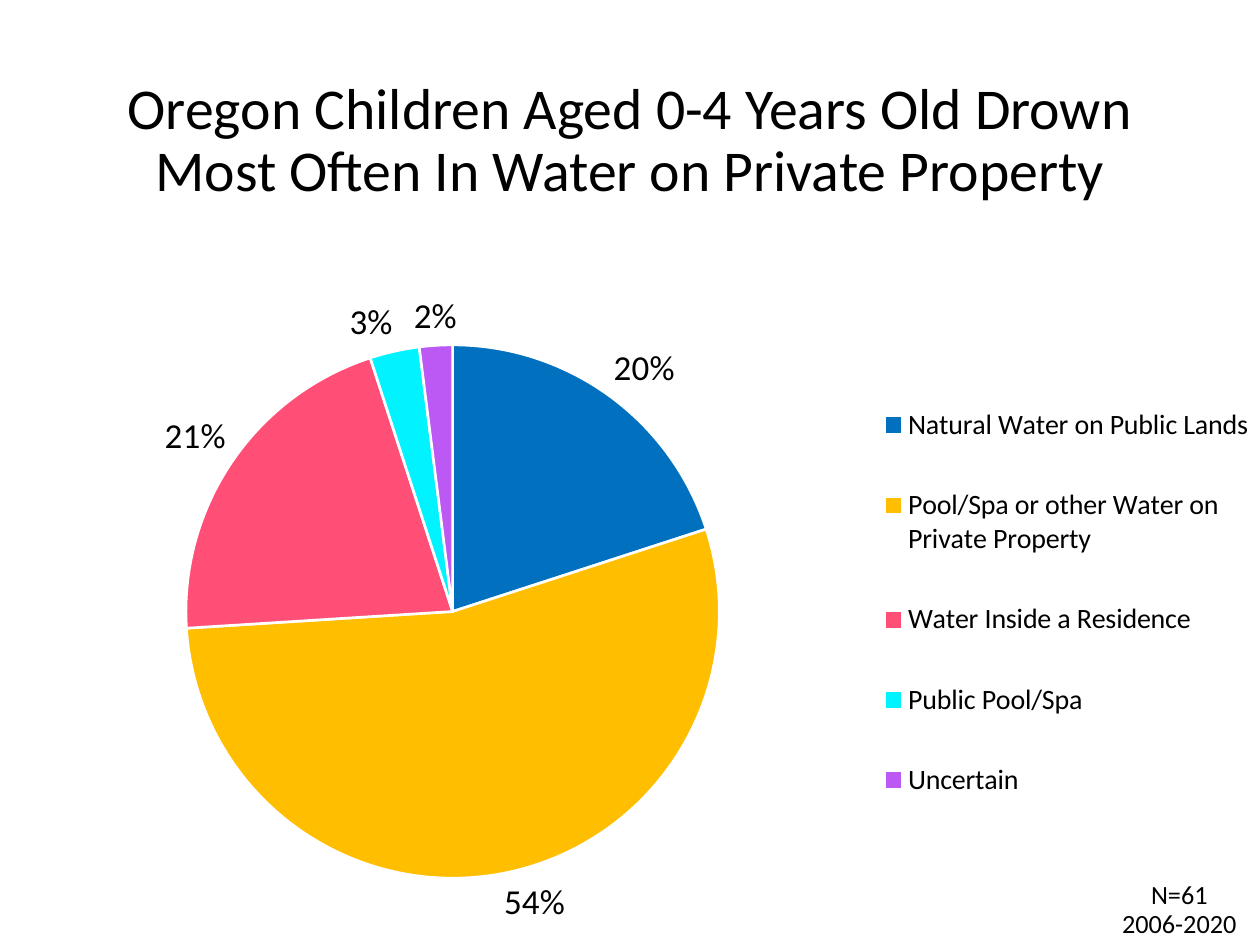
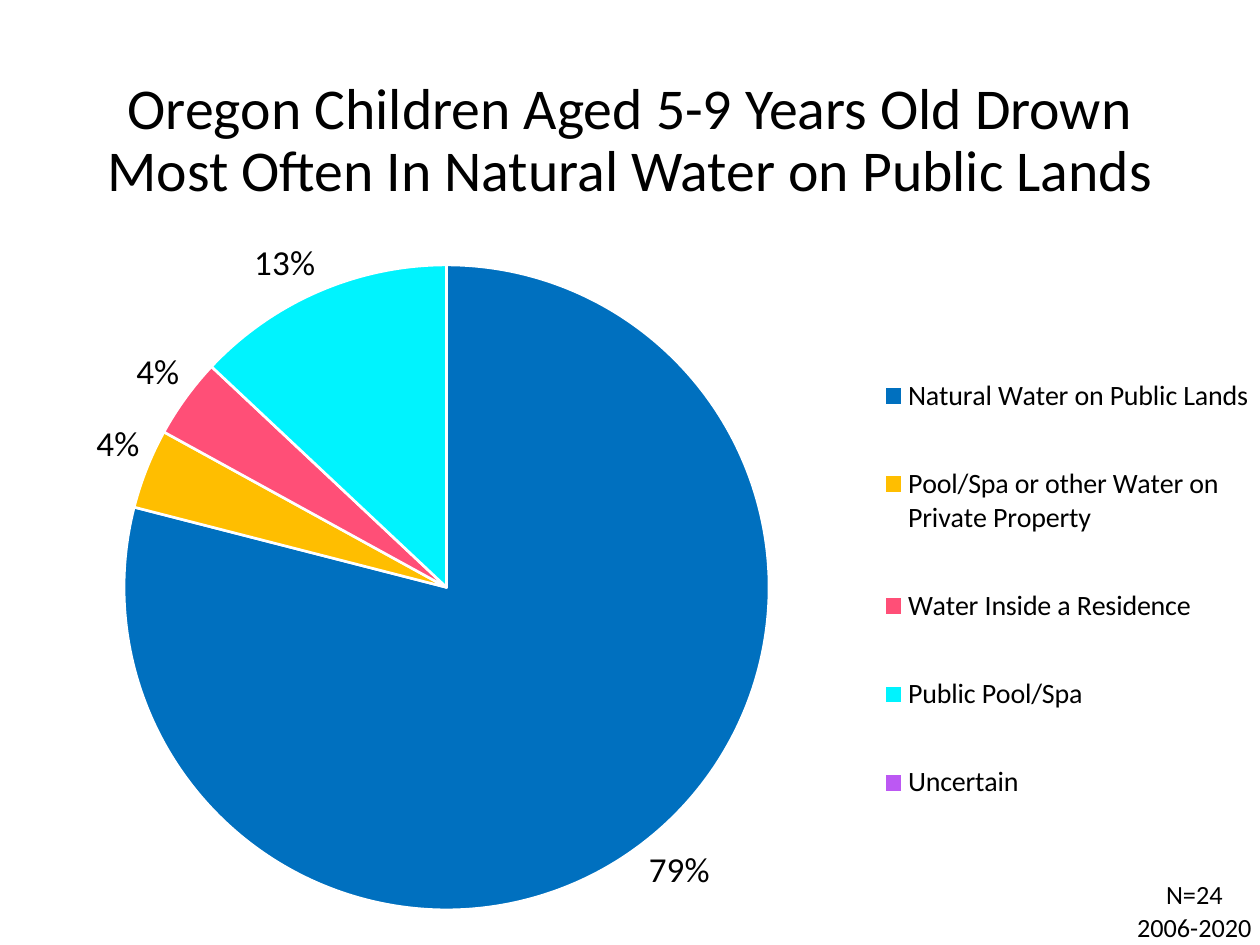
from lxml.etree import SubElement
from pptx import Presentation
from pptx.chart.data import CategoryChartData
from pptx.dml.color import RGBColor
from pptx.enum.chart import XL_CHART_TYPE, XL_LABEL_POSITION, XL_LEGEND_POSITION
from pptx.enum.text import MSO_ANCHOR, PP_ALIGN
from pptx.oxml.ns import qn
from pptx.util import Pt

FONT = "Calibri"
BLACK = RGBColor(0x00, 0x00, 0x00)
WHITE = RGBColor(0xFF, 0xFF, 0xFF)
SLIDE_WIDTH, SLIDE_HEIGHT = 720, 540
LEGEND_LEFT = 503
PLACES = {
    "Natural Water on Public Lands": RGBColor(0x00, 0x70, 0xBF),
    "Pool/Spa or other Water on Private Property": RGBColor(0xFF, 0xBE, 0x00),
    "Water Inside a Residence": RGBColor(0xFF, 0x4F, 0x77),
    "Public Pool/Spa": RGBColor(0x00, 0xF3, 0xFE),
    "Uncertain": RGBColor(0xBC, 0x58, 0xF3),
}

# Boxes are left, top, width, height in points.
AGE_GROUPS = [
    {
        "title": "Oregon Children Aged 0-4 Years Old Drown Most Often In Water on Private Property",
        "shares": (20, 54, 21, 3, 2),
        "chart": (0, 157.7, 720, 382.3),
        "pie": (106.3, 197.1, 304.8, 304.8),
        "legend_top": 206.9,
        "count": "N=61",
        "count_left": 650.2,
        "years_box": (633.6, 514.8, 80.6, 25.2),
    },
    {
        "title": "Oregon Children Aged 5-9 Years Old Drown Most Often In Natural Water on Public Lands",
        "shares": (79, 4, 4, 13, 0),
        "chart": (-5, 120.2, 725, 419.8),
        "pie": (70.9, 151.4, 368.6, 368.6),
        "legend_top": 185.7,
        "count": "N=24",
        "count_left": 658.8,
        "years_box": (642.2, 517, 80.6, 25.2),
    },
]


def add_text(slide, text, box, size, wrap=False, anchor=MSO_ANCHOR.TOP, line_spacing=None):
    frame = slide.shapes.add_textbox(*map(Pt, box)).text_frame
    frame.word_wrap = wrap
    frame.vertical_anchor = anchor
    paragraph = frame.paragraphs[0]
    paragraph.alignment = PP_ALIGN.CENTER
    paragraph.line_spacing = line_spacing
    run = paragraph.add_run()
    run.text = text
    run.font.name = FONT
    run.font.size = Pt(size)
    run.font.color.rgb = BLACK


def set_layout(element, box, chart_box, inner=False):
    """Fix the place of a plot area or legend inside its chart."""
    layout = element.find(qn("c:layout"))
    if layout is None:
        layout = element.makeelement(qn("c:layout"))
        element.insert(1 if element.tag == qn("c:legend") else 0, layout)
    manual = SubElement(layout, qn("c:manualLayout"))
    chart_left, chart_top, chart_width, chart_height = chart_box
    left, top, width, height = box
    settings = {"layoutTarget": "inner"} if inner else {}
    settings |= {
        "xMode": "edge",
        "yMode": "edge",
        "x": (left - chart_left) / chart_width,
        "y": (top - chart_top) / chart_height,
        "w": width / chart_width,
        "h": height / chart_height,
    }
    for tag, value in settings.items():
        SubElement(manual, qn(f"c:{tag}")).set("val", str(value))


prs = Presentation()
prs.slide_width = Pt(SLIDE_WIDTH)
prs.slide_height = Pt(SLIDE_HEIGHT)

for group in AGE_GROUPS:
    slide = prs.slides.add_slide(prs.slide_layouts[6])
    add_text(slide, group["title"], (49.7, 28.8, 620.6, 104.4), 33,
             wrap=True, anchor=MSO_ANCHOR.MIDDLE, line_spacing=0.9)
    add_text(slide, group["count"], (group["count_left"], 498.2, 47.5, 25.2), 15)

    drownings = CategoryChartData()
    drownings.categories = list(PLACES)
    drownings.add_series("Series 1", group["shares"])
    chart = slide.shapes.add_chart(
        XL_CHART_TYPE.PIE, *map(Pt, group["chart"]), drownings).chart
    chart.has_title = False
    chart.font.name = FONT
    chart.font.size = Pt(10)
    chart.font.color.rgb = BLACK

    chart.has_legend = True
    legend = chart.legend
    legend.position = XL_LEGEND_POSITION.RIGHT
    legend.include_in_layout = False
    legend.font.name = FONT
    legend.font.size = Pt(16)
    legend.font.color.rgb = BLACK

    pie = chart.plots[0]
    pie.vary_by_categories = True
    slices = pie.series[0]
    labels = slices.data_labels
    labels.show_percentage = True
    labels.show_value = False
    labels.number_format = "0%"
    labels.number_format_is_linked = False
    labels.position = XL_LABEL_POSITION.OUTSIDE_END
    labels.font.name = FONT
    labels.font.size = Pt(20)
    labels.font.color.rgb = BLACK

    for index, (color, share) in enumerate(zip(PLACES.values(), group["shares"])):
        style = slices.points[index].format
        style.fill.solid()
        style.fill.fore_color.rgb = color
        style.line.color.rgb = WHITE
        style.line.width = Pt(1.5)
        if share == 0:
            labels_xml = slices._element.find(qn("c:dLbls"))
            empty_label = labels_xml.makeelement(qn("c:dLbl"))
            labels_xml.insert(0, empty_label)
            SubElement(empty_label, qn("c:idx")).set("val", str(index))
            SubElement(empty_label, qn("c:delete")).set("val", "1")

    plot_area = chart._chartSpace.chart.plotArea
    set_layout(plot_area, group["pie"], group["chart"], inner=True)
    legend_box = (LEGEND_LEFT, group["legend_top"],
                  SLIDE_WIDTH - LEGEND_LEFT, 0.72 * group["chart"][3])
    set_layout(legend._element, legend_box, group["chart"])

    add_text(slide, "2006-2020", group["years_box"], 15)

prs.save("out.pptx")
